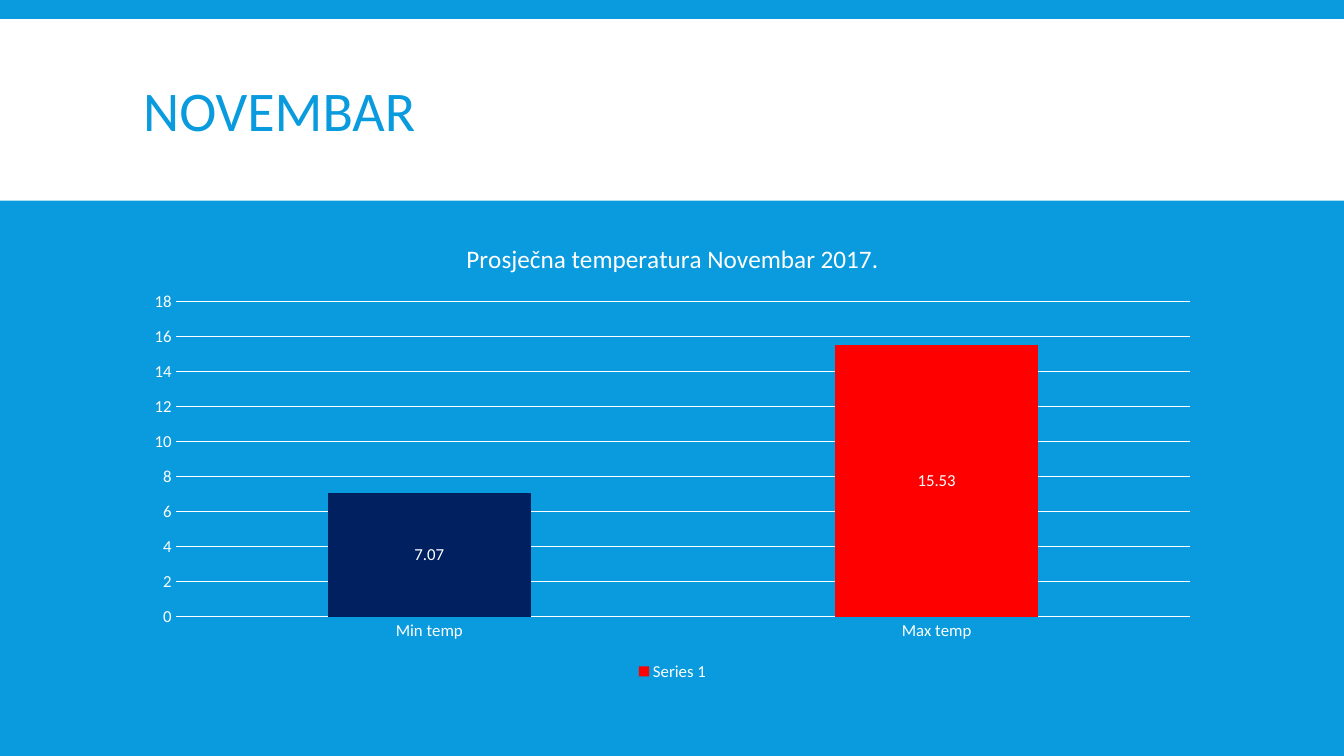
from pptx import Presentation
from pptx.chart.data import CategoryChartData
from pptx.dml.color import RGBColor
from pptx.enum import chart as ch, shapes, text
from pptx.util import Inches, Pt

BLUE = RGBColor(0x09, 0x9B, 0xDD)
WHITE = RGBColor(0xFF, 0xFF, 0xFF)
NAVY = RGBColor(0x00, 0x20, 0x60)
RED = RGBColor(0xFF, 0x00, 0x00)
FONT = "Calibri"
LEFT, WIDTH = Inches(1.32), Inches(10.7)


def style(font, size, color=WHITE):
    font.name = FONT
    font.size = Pt(size)
    font.bold = False
    font.color.rgb = color


def fill_solid(target, color):
    target.fill.solid()
    target.fill.fore_color.rgb = color


def add_header_band(slide):
    band = slide.shapes.add_shape(shapes.MSO_SHAPE.RECTANGLE, 0, Inches(0.19),
                                  Inches(13.33), Inches(1.8))
    band.shadow.inherit = False
    fill_solid(band, WHITE)
    band.line.fill.background()
    # Send the band behind the title
    slide.shapes._spTree.insert(2, band._element)


def set_title(slide, wording):
    title = slide.shapes.title
    title.left, title.top = LEFT, Inches(0.31)
    title.width, title.height = WIDTH, Inches(1.65)
    frame = title.text_frame
    frame.text = wording
    frame.word_wrap = True
    frame.vertical_anchor = text.MSO_ANCHOR.MIDDLE
    heading = frame.paragraphs[0]
    heading.alignment = text.PP_ALIGN.LEFT
    heading.line_spacing = 0.85
    style(heading.font, 40, BLUE)


def style_axis(axis):
    axis.major_tick_mark = axis.minor_tick_mark = ch.XL_TICK_MARK.NONE
    axis.format.line.fill.background()
    style(axis.tick_labels.font, 12)


def add_temperature_chart(slide):
    data = CategoryChartData()
    data.categories = ["Min temp", "Max temp"]
    data.add_series("Series 1", (7.07, 15.53))
    chart = slide.shapes.add_chart(ch.XL_CHART_TYPE.COLUMN_CLUSTERED, LEFT, Inches(2.2),
                                   WIDTH, Inches(4.6), data).chart
    style(chart.font, 10)

    # Chart title and legend
    chart.has_title = True
    caption = chart.chart_title.text_frame
    caption.text = "Prosječna temperatura Novembar 2017."
    style(caption.paragraphs[0].font, 18)
    chart.has_legend = True
    chart.legend.position = ch.XL_LEGEND_POSITION.BOTTOM
    chart.legend.include_in_layout = False
    style(chart.legend.font, 12)

    # Axes
    style_axis(chart.category_axis)
    degrees = chart.value_axis
    style_axis(degrees)
    degrees.minimum_scale, degrees.maximum_scale, degrees.major_unit = 0, 18, 2
    degrees.has_major_gridlines = True
    grid = degrees.major_gridlines.format.line
    grid.color.rgb = WHITE
    grid.width = Pt(0.75)

    # Columns and their values
    plot = chart.plots[0]
    plot.gap_width = 150
    plot.vary_by_categories = False
    temperatures = plot.series[0]
    fill_solid(temperatures.format, RED)
    fill_solid(temperatures.points[0].format, NAVY)
    labels = temperatures.data_labels
    labels.show_value = True
    labels.position = ch.XL_LABEL_POSITION.CENTER
    style(labels.font, 12)


def main():
    deck = Presentation()
    deck.slide_width, deck.slide_height = Inches(13.33), Inches(7.5)
    slide = deck.slides.add_slide(deck.slide_layouts[5])
    fill_solid(slide.background, BLUE)
    add_header_band(slide)
    set_title(slide, "NOVEMBAR")
    add_temperature_chart(slide)
    deck.save("out.pptx")


if __name__ == "__main__":
    main()
